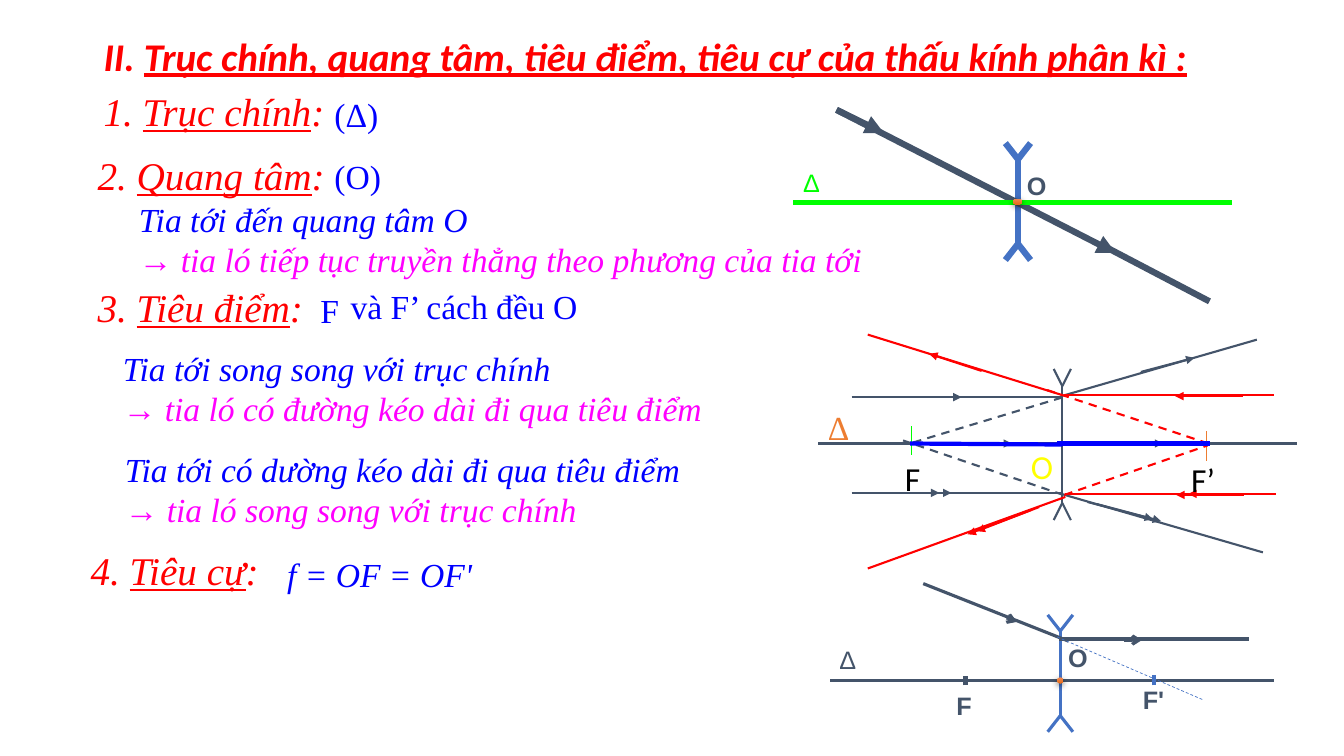
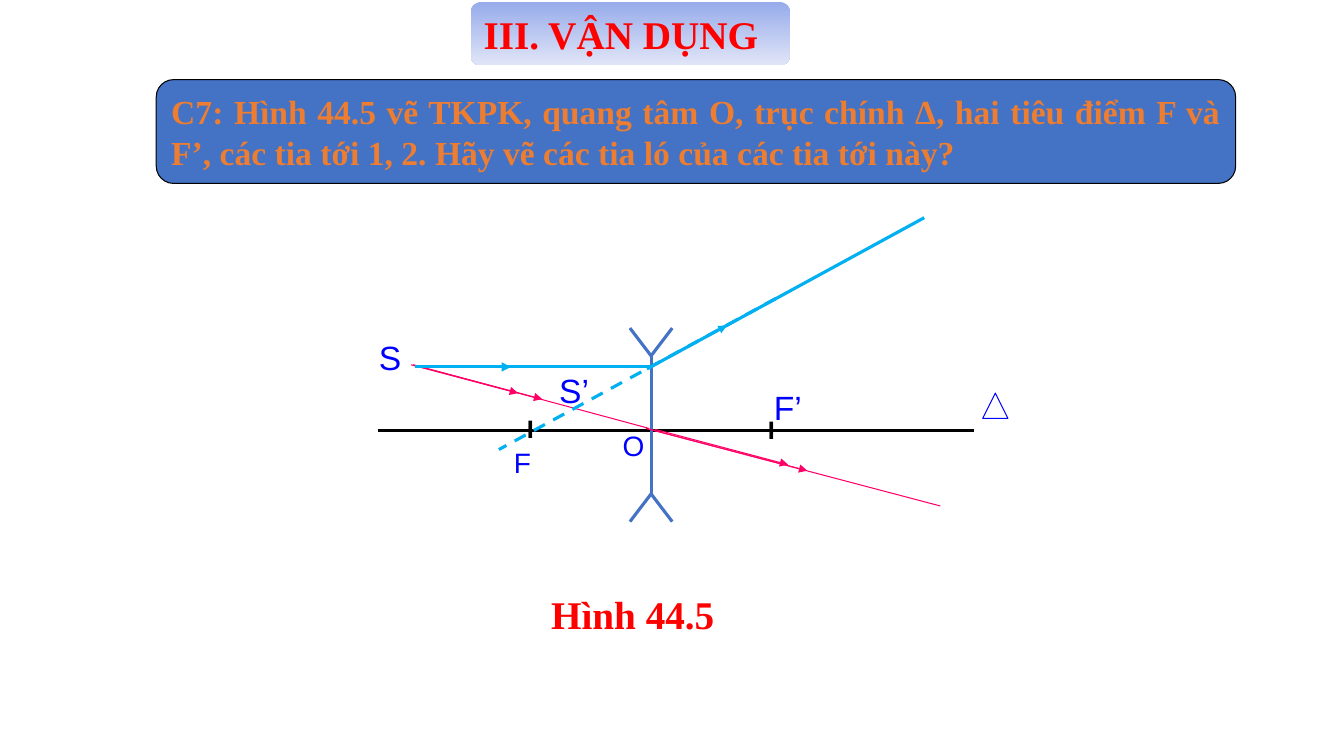
from lxml import etree
from pptx import Presentation
from pptx import util as u
from pptx.dml.color import RGBColor
from pptx.enum import dml, shapes, text
from pptx.oxml.ns import qn

RED = RGBColor(0xFF, 0x00, 0x00)
BLUE = RGBColor(0x00, 0x00, 0xFF)
MAGENTA = RGBColor(0xFF, 0x00, 0xFF)
GREEN = RGBColor(0x00, 0xFF, 0x00)
YELLOW = RGBColor(0xFF, 0xFF, 0x00)
BLACK = RGBColor(0x00, 0x00, 0x00)
SLATE = RGBColor(0x44, 0x54, 0x6A)
STEEL = RGBColor(0x44, 0x72, 0xC4)
ORANGE = RGBColor(0xED, 0x7D, 0x31)
CYAN = RGBColor(0x00, 0xB0, 0xF0)
PINK = RGBColor(0xFF, 0x00, 0x66)
DOT_TOP = RGBColor(0xF1, 0x8C, 0x57)
DOT_BOTTOM = RGBColor(0xE5, 0x6C, 0x19)
BAND_TOP = RGBColor(0x96, 0xAB, 0xEA)
BAND_BOTTOM = RGBColor(0xE0, 0xE5, 0xF7)
SERIF, SANS, BODY = "Times New Roman", "Arial", "Calibri"
INCH = 2.54


def line(s, points, color, width, tail=None, dash=False):
    sp = s.shapes.add_connector(shapes.MSO_CONNECTOR.STRAIGHT,
                                *[u.Cm(v * INCH) for v in points])
    sp.line.color.rgb = color
    sp.line.width = u.Pt(width)
    if dash:
        sp.line.dash_style = dml.MSO_LINE.DASH
    if tail:
        etree.SubElement(sp.line._get_or_add_ln(), qn("a:tailEnd"), type=tail)
    etree.SubElement(sp._element.spPr, qn("a:effectLst"))


def write(sp, size, paragraphs, align=text.PP_ALIGN.LEFT):
    tf = sp.text_frame
    tf.word_wrap = True
    for i, runs in enumerate(paragraphs):
        p = tf.add_paragraph() if i else tf.paragraphs[0]
        p.alignment = align
        for words, font, color, style in runs:
            r = p.add_run()
            r.text = words
            r.font.name = font
            r.font.size = u.Pt(size)
            r.font.color.rgb = color
            r.font.bold = "b" in style
            r.font.italic = "i" in style
            r.font.underline = "u" in style
    return tf


prs = Presentation()
prs.slide_width, prs.slide_height = u.Cm(33.87), u.Cm(19.05)
lenses_slide, exercise = [prs.slides.add_slide(prs.slide_layouts[6]) for _ in range(2)]

line(exercise, (3.75, 4.27, 9.66, 4.27), BLACK, 2.25)

lenses = [
    (lenses_slide, 10.1, 1.58, 2.42, 0.125, 0.16, STEEL, 4.5),
    (lenses_slide, 10.54, 3.83, 4.99, 0.085, 0.17, SLATE, 1.5),
    (lenses_slide, 10.52, 6.26, 7.1, 0.125, 0.16, STEEL, 2.25),
    (exercise, 6.46, 3.53, 4.9, 0.21, 0.275, STEEL, 2.25),
]
for s, x, top, bottom, dx, dy, color, width in lenses:
    line(s, (x, top, x, bottom), color, width)
    for side in (-dx, dx):
        line(s, (x, top, x + side, top - dy), color, width)
        line(s, (x, bottom, x + side, bottom + dy), color, width)

rays = [
    (lenses_slide, SLATE, 4.5, None, False, [(10.95, 2.44, 12, 2.99)]),
    (lenses_slide, SLATE, 4.5, "triangle", False,
     [(8.3, 1.09, 11.07, 2.51), (8.3, 1.09, 8.77, 1.32)]),
    (lenses_slide, GREEN, 3, None, False, [(7.87, 2.01, 12.22, 2.01)]),
    (lenses_slide, SLATE, 1.5, None, False,
     [(8.45, 3.94, 10.54, 3.94), (10.53, 3.93, 12.47, 3.37), (8.45, 4.89, 10.54, 4.89),
      (10.53, 4.9, 12.53, 5.48), (8.12, 4.4, 12.87, 4.4)]),
    (lenses_slide, SLATE, 1.5, "triangle", False,
     [(8.54, 3.94, 9.54, 3.94), (11.32, 3.69, 11.85, 3.55), (8.48, 4.89, 9.32, 4.89),
      (8.77, 4.89, 9.44, 4.89), (10.79, 4.98, 11.44, 5.15), (10.88, 5, 11.52, 5.17),
      (10.7, 4.4, 11.54, 4.4), (9.2, 4.4, 10.04, 4.4)]),
    (lenses_slide, SLATE, 1.5, None, True,
     [(9.06, 4.39, 10.55, 3.94), (10.55, 4.91, 8.96, 4.37)]),
    (lenses_slide, GREEN, 0.75, None, False, [(9.04, 4.23, 9.04, 4.51)]),
    (lenses_slide, ORANGE, 0.75, None, False, [(11.97, 4.28, 11.97, 4.57)]),
    (lenses_slide, RED, 1.5, None, False,
     [(12.66, 4.9, 10.57, 4.9), (10.54, 3.92, 8.61, 3.32), (10.57, 4.93, 8.61, 5.64),
      (12.64, 3.92, 10.56, 3.92)]),
    (lenses_slide, RED, 1.5, "triangle", False,
     [(12.63, 4.9, 11.79, 4.9), (12.34, 4.91, 11.67, 4.91), (9.74, 3.68, 9.22, 3.51),
      (10.31, 5.03, 9.69, 5.27), (10.23, 5.06, 9.6, 5.3), (12.33, 3.93, 11.66, 3.93)]),
    (lenses_slide, RED, 1.5, None, True,
     [(10.56, 4.91, 11.98, 4.42), (11.99, 4.4, 10.39, 3.87)]),
    (lenses_slide, BLUE, 3, None, False,
     [(9.03, 4.4, 10.54, 4.41), (10.49, 4.4, 12.01, 4.4)]),
    (lenses_slide, SLATE, 2.25, None, False,
     [(10.51, 6.34, 12.39, 6.34), (9.16, 5.79, 10.6, 6.36), (8.24, 6.75, 12.64, 6.75)]),
    (lenses_slide, SLATE, 2.25, "arrow", False,
     [(11.15, 6.35, 11.33, 6.35), (9.99, 6.13, 10.09, 6.17)]),
    (lenses_slide, SLATE, 3, None, False, [(9.58, 6.8, 9.58, 6.71)]),
    (lenses_slide, STEEL, 2.25, None, False, [(11.45, 6.8, 11.45, 6.7)]),
    (lenses_slide, STEEL, 0.5, None, True, [(10.49, 6.32, 11.93, 6.94)]),
    (exercise, PINK, 0.75, None, False,
     [(4.1, 3.62, 6.44, 4.25), (6.41, 4.25, 9.33, 5.02)]),
    (exercise, PINK, 0.75, "triangle", False,
     [(4.1, 3.62, 5.38, 3.96), (4.08, 3.62, 5.14, 3.9),
      (6.41, 4.25, 8.01, 4.67), (6.5, 4.26, 7.82, 4.61)]),
    (exercise, CYAN, 2.25, None, False,
     [(4.12, 3.64, 6.45, 3.64), (9.17, 2.16, 6.42, 3.66)]),
    (exercise, CYAN, 2.25, "triangle", False, [(4.12, 3.64, 5.07, 3.64)]),
    (exercise, CYAN, 0.75, "triangle", False, [(6.42, 3.66, 7.21, 3.23)]),
    (exercise, CYAN, 2.25, None, True, [(7.7, 2.96, 4.95, 4.46)]),
]
for s, color, width, tail, dash, segments in rays:
    for points in segments:
        line(s, points, color, width, tail, dash)

for x, y, w, h in [(10.05, 1.97, 0.09, 0.06), (10.49, 6.72, 0.06, 0.06)]:
    sp = lenses_slide.shapes.add_shape(shapes.MSO_SHAPE.OVAL,
                                       *[u.Cm(v * INCH) for v in (x, y, w, h)])
    sp.fill.gradient()
    sp.fill.gradient_angle = 270
    for stop, color in zip(sp.fill.gradient_stops, (DOT_TOP, DOT_BOTTOM)):
        stop.color.rgb = color
    sp.line.fill.background()
    sp.shadow.inherit = False
    shadow = etree.SubElement(sp._element.spPr.find(qn("a:effectLst")), qn("a:outerShdw"),
                              blurRad="57150", dist="19050", dir="5400000", rotWithShape="0")
    shade = etree.SubElement(shadow, qn("a:srgbClr"), val="000000")
    etree.SubElement(shade, qn("a:alpha"), val="63000")

sp = exercise.shapes.add_shape(shapes.MSO_SHAPE.FLOWCHART_EXTRACT,
                               *[u.Cm(v * INCH) for v in (9.75, 3.9, 0.25, 0.25)])
sp.fill.background()
sp.line.color.rgb = BLUE
sp.line.width = u.Pt(0.75)
sp.shadow.inherit = False

sp = lenses_slide.shapes.add_textbox(*[u.Cm(v * INCH) for v in (0.93, 0.27, 11.97, 1.24)])
tf = write(sp, 28, [
    [("II. ", BODY, RED, "bi"),
     ("Trục chính, quang tâm, tiêu điểm, tiêu cự của thấu kính phân kì :", BODY, RED, "biu")],
    [("1. ", SERIF, RED, "i"), ("Trục chính", SERIF, RED, "iu"), (":", SERIF, RED, "i")],
])
tf.paragraphs[1].space_before = u.Pt(6)

headings = [(0.87, 1.45, "2. ", "Quang tâm"), (0.87, 2.76, "3. ", "Tiêu điểm"),
            (0.8, 5.37, "4. ", "Tiêu cự")]
for x, y, number, name in headings:
    sp = lenses_slide.shapes.add_textbox(*[u.Cm(v * INCH) for v in (x, y, 2.84, 0.57)])
    write(sp, 28, [[(number, SERIF, RED, "i"), (name, SERIF, RED, "iu"),
                    (":", SERIF, RED, "i")]])

rules = [
    (1.28, 1.92, "Tia tới đến quang tâm O",
     "→ tia ló tiếp tục truyền thẳng theo phương của tia tới"),
    (1.12, 3.4, "Tia tới song song với trục chính",
     "→ tia ló có đường kéo dài đi qua tiêu điểm"),
    (1.14, 4.4, "Tia tới có dường kéo dài đi qua tiêu điểm",
     "→ tia ló song song với trục chính"),
]
for x, y, incoming, outgoing in rules:
    sp = lenses_slide.shapes.add_textbox(*[u.Cm(v * INCH) for v in (x, y, 8.04, 0.91)])
    write(sp, 24, [[(incoming, SERIF, BLUE, "i")], [(outgoing, SERIF, MAGENTA, "i")]])

labels = [
    (lenses_slide, 3.22, 0.88, 1.25, "(Δ)", 24, SERIF, BLUE, ""),
    (lenses_slide, 3.22, 1.5, 1.25, "(O)", 24, SERIF, BLUE, ""),
    (lenses_slide, 3.08, 2.83, 2.84, "F", 24, SERIF, BLUE, ""),
    (lenses_slide, 3.38, 2.79, 6.66, "và F’ cách đều O", 24, SERIF, BLUE, ""),
    (lenses_slide, 2.75, 5.45, 5.65, "f = OF = OF'", 24, SERIF, BLUE, "i"),
    (lenses_slide, 7.87, 1.61, 0.55, "Δ", 18, SANS, GREEN, ""),
    (lenses_slide, 10.09, 1.64, 0.42, "O", 18, SANS, SLATE, "b"),
    (lenses_slide, 8.88, 4.49, 0.58, "F", 24, BODY, BLACK, ""),
    (lenses_slide, 11.72, 4.5, 0.67, "F’", 24, BODY, BLACK, ""),
    (lenses_slide, 10.13, 4.37, 0.5, "O", 24, BODY, YELLOW, ""),
    (lenses_slide, 8.12, 3.99, 0.58, "∆", 24, SERIF, ORANGE, ""),
    (lenses_slide, 8.23, 6.34, 0.4, "Δ", 18, SANS, SLATE, ""),
    (lenses_slide, 10.5, 6.32, 0.42, "O", 18, SANS, SLATE, "b"),
    (lenses_slide, 9.39, 6.8, 0.4, "F", 18, SANS, SLATE, "b"),
    (lenses_slide, 11.24, 6.74, 0.5, "F'", 18, SANS, SLATE, "b"),
    (exercise, 6.08, 4.2, 0.42, "O", 20, SANS, BLUE, ""),
    (exercise, 5, 4.37, 0.42, "F", 20, SANS, BLUE, ""),
    (exercise, 7.58, 3.79, 0.58, "F’", 24, SANS, BLUE, ""),
    (exercise, 5.13, 4.05, 0.28, "I", 18, SANS, BLACK, "b"),
    (exercise, 7.52, 4.06, 0.28, "I", 18, SANS, BLACK, "b"),
    (exercise, 3.66, 3.29, 0.45, "S", 24, SANS, BLUE, ""),
    (exercise, 5.45, 3.62, 0.67, "S’", 24, SANS, BLUE, ""),
    (exercise, 5.37, 5.81, 1.9, "Hình 44.5", 28, SERIF, RED, "b"),
]
for s, x, y, w, words, size, font, color, style in labels:
    sp = s.shapes.add_textbox(*[u.Cm(v * INCH) for v in (x, y, w, size / 60 + 0.1)])
    write(sp, size, [[(words, font, color, style)]])

band, question = [
    exercise.shapes.add_shape(shapes.MSO_SHAPE.ROUNDED_RECTANGLE,
                              *[u.Cm(v * INCH) for v in box])
    for box in [(4.67, 0.02, 3.17, 0.63), (1.55, 0.79, 10.71, 1.03)]]
for sp in (band, question):
    sp.shadow.inherit = False
    sp.text_frame.vertical_anchor = text.MSO_ANCHOR.MIDDLE
band.fill.gradient()
band.fill.gradient_angle = 270
for stop, color in zip(band.fill.gradient_stops, (BAND_TOP, BAND_BOTTOM)):
    stop.color.rgb = color
band.line.fill.background()
write(band, 28, [[("III. VẬN DỤNG", SERIF, RED, "b")]])
question.fill.solid()
question.fill.fore_color.rgb = STEEL
question.line.color.rgb = BLACK
question.line.width = u.Pt(0.75)
write(question, 24, [[(
    "C7: Hình 44.5 vẽ TKPK, quang tâm O, trục chính Δ, hai tiêu điểm F và F’, "
    "các tia tới 1, 2. Hãy vẽ các tia ló của các tia tới này?", SERIF, ORANGE, "b")]],
    text.PP_ALIGN.JUSTIFY)

prs.save("out.pptx")
